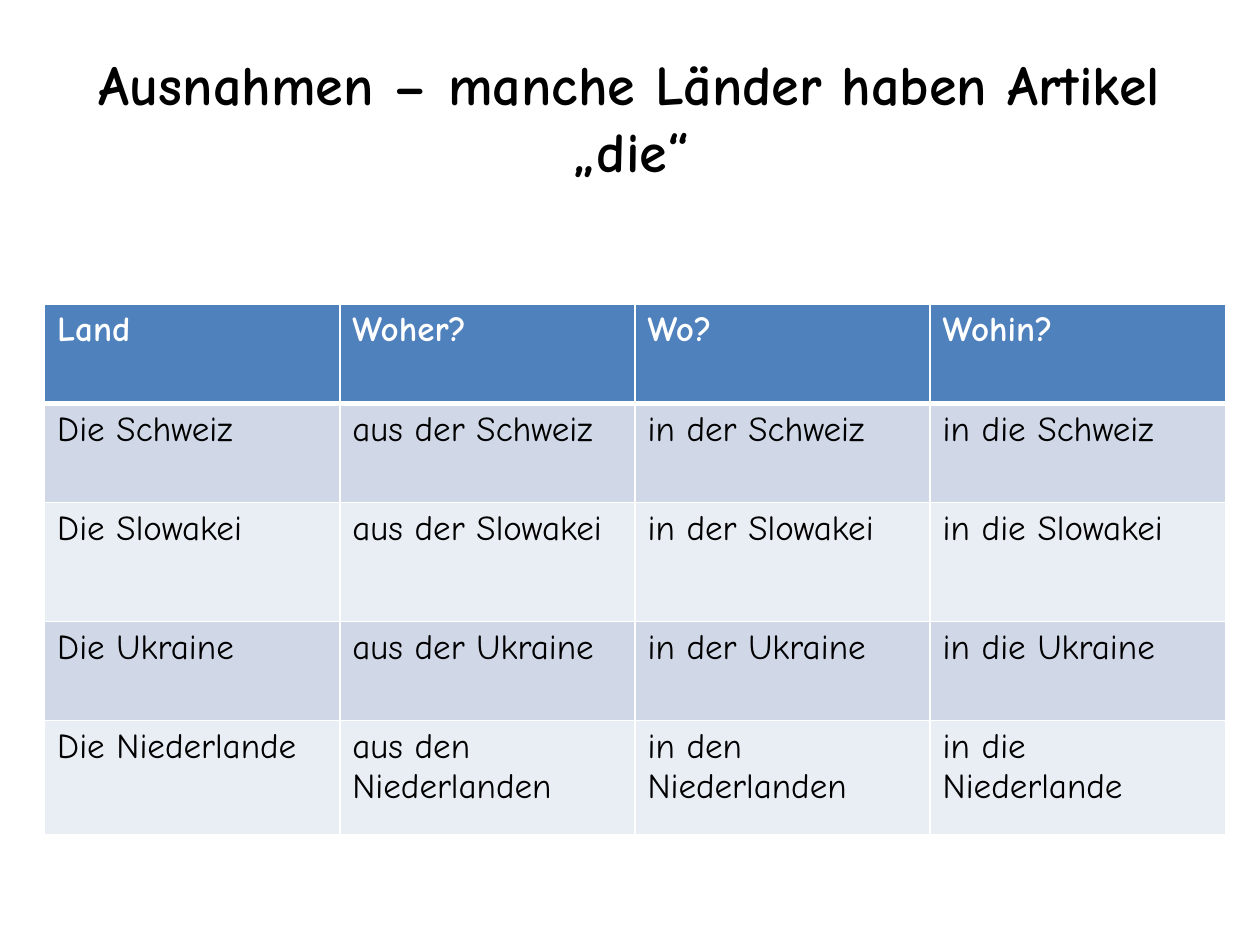
from dataclasses import dataclass

from lxml.etree import SubElement
from pptx import Presentation
from pptx.dml.color import RGBColor as RGB
from pptx.enum.text import MSO_ANCHOR as Anchor, PP_ALIGN as Align
from pptx.oxml.ns import qn
from pptx.util import Cm, Pt


@dataclass(frozen=True)
class Theme:
    font: str = "Comic Neue"
    title_size: int = 32
    table_size: int = 20
    text: str = "000000"
    light: str = "FFFFFF"
    header: str = "4F81BD"
    bands: tuple = ("D0D8E8", "E9EDF4")
    line: float = 1
    header_line: float = 3


THEME = Theme()
TITLE = "Ausnahmen – manche Länder haben Artikel „die“"
HEADINGS = ("Land", "Woher?", "Wo?", "Wohin?")
COUNTRIES = (
    ("Die Schweiz", "aus der Schweiz", "in der Schweiz", "in die Schweiz"),
    ("Die Slowakei", "aus der Slowakei", "in der Slowakei", "in die Slowakei"),
    ("Die Ukraine", "aus der Ukraine", "in der Ukraine", "in die Ukraine"),
    ("Die Niederlande", "aus den Niederlanden", "in den Niederlanden",
     "in die Niederlande"),
)
ROW_HEIGHTS = (2, 2, 2.4, 2, 2.3)


def write(tf, text, size, color, bold):
    p = tf.paragraphs[0]
    r = p.add_run()
    r.text = text
    for name, value in {"name": THEME.font, "size": Pt(size), "bold": bold}.items():
        setattr(r.font, name, value)
    r.font.color.rgb = RGB.from_string(color)
    return p


def set_borders(cell, top, bottom):
    tc_pr = cell._tc.get_or_add_tcPr()
    widths = {"lnL": THEME.line, "lnR": THEME.line, "lnT": top, "lnB": bottom}
    for side, width in widths.items():
        ln = SubElement(tc_pr, qn(f"a:{side}"), w=str(Pt(width)))
        fill = SubElement(ln, qn("a:solidFill"))
        SubElement(fill, qn("a:srgbClr"), val=THEME.light)


def add_title(s, left, top, width, height):
    tf = s.shapes.add_textbox(left, top, width, height).text_frame
    for name, value in {"word_wrap": True, "vertical_anchor": Anchor.MIDDLE}.items():
        setattr(tf, name, value)
    p = write(tf, TITLE, THEME.title_size, THEME.text, True)
    p.alignment = Align.CENTER


def add_country_table(s, left, top, width, height):
    rows = (HEADINGS, *COUNTRIES)
    table = s.shapes.add_table(len(rows), len(HEADINGS), left, top, width, height).table
    for row, share in zip(table.rows, ROW_HEIGHTS):
        row.height = int(height * share / sum(ROW_HEIGHTS))

    for i, texts in enumerate(rows):
        is_header = i == 0
        fill = THEME.header if is_header else THEME.bands[(i - 1) % 2]
        color = THEME.light if is_header else THEME.text
        # The thick rule is shared by the header and the first country
        above = THEME.header_line if i == 1 else THEME.line
        below = THEME.header_line if is_header else THEME.line
        for j, text in enumerate(texts):
            cell = table.cell(i, j)
            set_borders(cell, above, below)
            cell.fill.solid()
            cell.fill.fore_color.rgb = RGB.from_string(fill)
            write(cell.text_frame, text, THEME.table_size, color, is_header)


def main():
    prs = Presentation()
    prs.slide_width, prs.slide_height = Cm(25.4), Cm(19.05)
    s = prs.slides.add_slide(prs.slide_layouts[6])
    add_title(s, Cm(1.27), Cm(0.76), Cm(22.86), Cm(3.18))
    add_country_table(s, Cm(0.9), Cm(6.13), Cm(23.8), Cm(10.7))
    prs.save("out.pptx")


if __name__ == "__main__":
    main()
